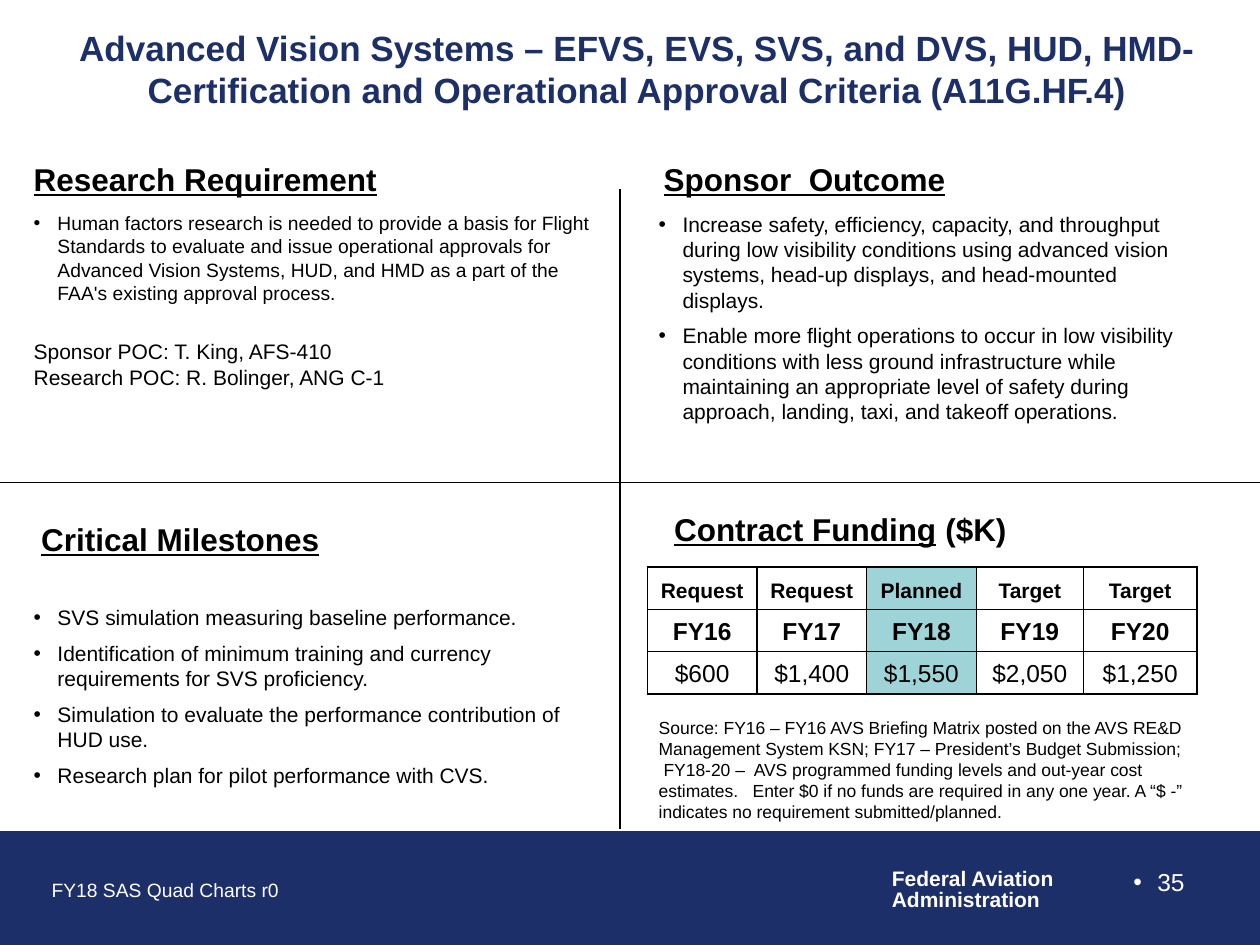
from lxml.etree import SubElement as Sub
from pptx import Presentation as Deck
from pptx.dml.color import RGBColor as Color
from pptx.enum.shapes import MSO_CONNECTOR as Link, MSO_SHAPE as Form
from pptx.enum.text import MSO_ANCHOR as Anchor, PP_ALIGN as Align
from pptx.oxml import parse_xml as parse
from pptx.oxml.ns import nsdecls, qn
from pptx.util import Cm, Pt

NAVY, TEAL, BLACK, WHITE = "1D2F68", "9ED3D7", "000000", "FFFFFF"


def paint(target, code):
    target.rgb = Color.from_string(code)


def flood(fill, code):
    fill.solid()
    paint(fill.fore_color, code)


class Quad:
    font = "Arial"
    indent = Cm(0.48)
    gap = 6

    def __init__(self, deck):
        self.slide = deck.slides.add_slide(deck.slide_layouts[6])
        self.shapes = self.slide.shapes

    def run(self, para, text, size, ink=BLACK, bold=False, under=False):
        run = para.add_run()
        run.text = text
        face = run.font
        face.name, face.size, face.bold = self.font, Pt(size), bold
        if under:
            face.underline = True
        paint(face.color, ink)

    def bullet(self, para):
        props = para._p.get_or_add_pPr()
        props.set("marL", str(self.indent))
        props.set("indent", str(-self.indent))
        Sub(props, qn("a:buFont")).set("typeface", self.font)
        Sub(props, qn("a:buChar")).set("char", "•")

    def frame(self, left, top, width, height):
        box = self.shapes.add_textbox(Cm(left), Cm(top), Cm(width), Cm(height))
        box.text_frame.word_wrap = True
        return box.text_frame

    def text(self, spot, lines, size, ink=BLACK, bold=False, align=Align.LEFT,
             bullet=False, gap=0, lead=None):
        frame = self.frame(*spot)
        for i, line in enumerate(lines):
            para = frame.add_paragraph() if i else frame.paragraphs[0]
            if bullet:
                self.bullet(para)
            para.alignment = align
            para.space_before = Pt(gap if i else 0)
            if lead:
                para.line_spacing = lead
            self.run(para, line, size, ink, bold)
        return frame

    def points(self, spot, lines, size=12):
        return self.text(spot, lines, size, bullet=True, gap=self.gap)

    def head(self, spot, title, tail=""):
        para = self.frame(*spot).paragraphs[0]
        self.run(para, title, 18, bold=True, under=True)
        if tail:
            self.run(para, tail, 18, bold=True)

    def rule(self, *ends):
        line = self.shapes.add_connector(Link.STRAIGHT, *map(Cm, ends))
        line.line.width = Pt(0.75)
        paint(line.line.color, BLACK)
        Sub(line._element.spPr, qn("a:effectLst"))

    def band(self, left, top, width, height, code):
        bar = self.shapes.add_shape(Form.RECTANGLE, Cm(left), Cm(top), Cm(width), Cm(height))
        bar.shadow.inherit = False
        flood(bar.fill, code)
        paint(bar.line.color, code)
        bar.line.width = Pt(0.75)

    def edge(self, cell):
        props = cell._tc.get_or_add_tcPr()
        for i, side in enumerate("LRTB"):
            props.insert(i, parse(
                f'<a:ln{side} {nsdecls("a")} w="{Pt(1)}"><a:solidFill>'
                f'<a:srgbClr val="{BLACK}"/></a:solidFill></a:ln{side}>'))

    def table(self, left, top, widths, heights, rows, styles, accent):
        grid = self.shapes.add_table(
            len(rows), len(widths), Cm(left), Cm(top),
            Cm(sum(widths)), Cm(sum(heights))).table
        for col, width in zip(grid.columns, widths):
            col.width = Cm(width)
        for r, (row, (size, bold)) in enumerate(zip(rows, styles)):
            grid.rows[r].height = Cm(heights[r])
            for c, word in enumerate(row):
                cell = grid.cell(r, c)
                cell.vertical_anchor = Anchor.BOTTOM
                flood(cell.fill, TEAL if c == accent else WHITE)
                self.edge(cell)
                para = cell.text_frame.paragraphs[0]
                para.alignment = Align.CENTER
                self.run(para, word, size, bold=bold)


def main():
    deck = Deck()
    deck.slide_width, deck.slide_height = Cm(25.4), Cm(19.05)
    quad = Quad(deck)

    quad.band(0, 16.76, 25.4, 2.27, NAVY)
    quad.text((17.73, 17.4, 4, 1.12), ["Federal Aviation", "Administration"],
              12, WHITE, bold=True, lead=0.85)
    title = quad.text(
        (1.07, 0.33, 23.55, 2.11),
        ["Advanced Vision Systems – EFVS, EVS, SVS, and DVS, HUD, HMD-"
         "Certification and Operational Approval Criteria (A11G.HF.4)"],
        20, NAVY, bold=True, align=Align.CENTER)
    title.vertical_anchor = Anchor.MIDDLE

    quad.head((0.58, 10.36, 11.43, 0.97), "Critical Milestones")
    quad.head((13.13, 3.1, 11.86, 0.84), "Sponsor  Outcome")
    quad.head((0.43, 3.1, 12.7, 0.84), "Research Requirement")
    quad.head((13.34, 10.16, 11.23, 1.37), "Contract Funding", " ($K)")

    quad.rule(12.5, 3.81, 12.5, 16.71)
    quad.rule(0, 9.73, 25.4, 9.73)

    quad.table(
        13.05, 11.43, [2.21, 2.21, 2.21, 2.16, 2.29], [0.86, 0.84, 0.84],
        [["Request", "Request", "Planned", "Target", "Target"],
         ["FY16", "FY17", "FY18", "FY19", "FY20"],
         ["$600", "$1,400", "$1,550", "$2,050", "$1,250"]],
        [(12, True), (14, True), (14, False)], accent=2)

    need = quad.points(
        (0.43, 4.14, 12.07, 3.89),
        ["Human factors research is needed to provide a basis for Flight Standards "
         "to evaluate and issue operational approvals for Advanced Vision Systems, "
         "HUD, and HMD as a part of the FAA's existing approval process."], 11)
    for name, gap in (("Sponsor POC: T. King, AFS-410", 20),
                      ("Research POC: R. Bolinger, ANG C-1", 0)):
        para = need.add_paragraph()
        para.space_before = Pt(gap)
        quad.run(para, name, 12)

    quad.points(
        (13.03, 4.14, 11.51, 4.11),
        ["Increase safety, efficiency, capacity, and throughput during low visibility "
         "conditions using advanced vision systems, head-up displays, and "
         "head-mounted displays.",
         "Enable more flight operations to occur in low visibility conditions with "
         "less ground infrastructure while maintaining an appropriate level of safety "
         "during approach, landing, taxi, and takeoff operations."])
    quad.points(
        (0.43, 12.07, 11.56, 4.11),
        ["SVS simulation measuring baseline performance.",
         "Identification of minimum training and currency requirements for SVS proficiency.",
         "Simulation to evaluate the performance contribution of HUD use.",
         "Research plan for pilot performance with CVS."])

    quad.text((18.21, 17.35, 5.92, 1.32), ["35"], 14, WHITE,
              align=Align.RIGHT, bullet=True)
    quad.text((0.79, 17.58, 5.3, 0.74), ["FY18 SAS Quad Charts r0"], 11, WHITE)
    quad.text(
        (13.03, 14.33, 11.1, 3.02),
        ["Source: FY16 – FY16 AVS Briefing Matrix posted on the AVS RE&D Management "
         "System KSN; FY17 – President’s Budget Submission;  FY18-20 –  AVS programmed "
         "funding levels and out-year cost estimates.   Enter $0 if no funds are required "
         "in any one year. A “$ -” indicates no requirement submitted/planned."], 10)

    deck.save("out.pptx")


if __name__ == "__main__":
    main()
